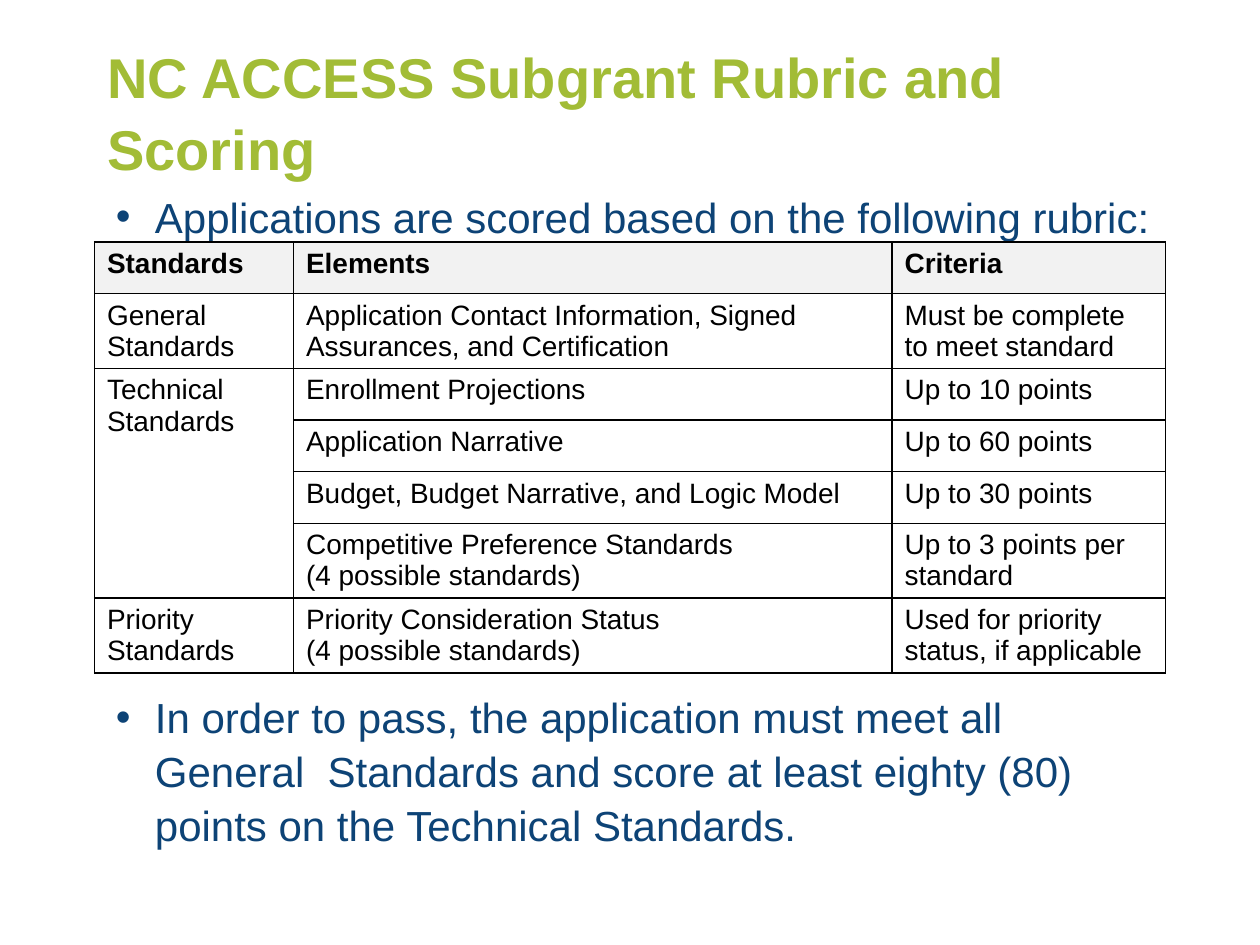
from lxml import etree
from pptx import Presentation
from pptx.dml.color import RGBColor
from pptx.enum.text import MSO_ANCHOR, MSO_AUTO_SIZE, PP_ALIGN
from pptx.oxml.ns import qn
from pptx.util import Inches, Pt

MIDDLE, TOP = MSO_ANCHOR.MIDDLE, MSO_ANCHOR.TOP
NO_FIT = MSO_AUTO_SIZE.NONE
LEFT = PP_ALIGN.LEFT

COLORS = {"title": "A2BC36", "body": "0D4376", "text": "000000",
          "header": "F2F2F2", "cell": "FFFFFF", "border": "000000"}
FONT = "Arial"

TITLE = "NC ACCESS Subgrant Rubric and Scoring"
BULLETS = [
    ("Applications are scored based on the following rubric:", 0),
    ("In order to pass, the application must meet all General  Standards "
     "and score at least eighty (80) points on the Technical Standards.", 255),
]
RUBRIC = [
    ("Standards", "Elements", "Criteria"),
    ("General Standards",
     "Application Contact Information, Signed Assurances, and Certification",
     "Must be complete to meet standard"),
    ("Technical Standards", "Enrollment Projections", "Up to 10 points"),
    (None, "Application Narrative", "Up to 60 points"),
    (None, "Budget, Budget Narrative, and Logic Model", "Up to 30 points"),
    (None, "Competitive Preference Standards\n(4 possible standards)",
     "Up to 3 points per standard"),
    ("Priority Standards",
     "Priority Consideration Status\n(4 possible standards)",
     "Used for priority status, if applicable"),
]
COLUMN_WIDTHS = [1.58, 4.75, 2.17]
ROW_HEIGHT = 0.41
TECHNICAL_ROWS = (2, 5)


def write(paragraph, text, size, color, bold=False, before=0, bullet=False,
          spacing=None):
    if bullet:
        props = paragraph._p.get_or_add_pPr()
        props.set("marL", str(Inches(0.38)))
        props.set("indent", str(Inches(-0.31)))
        etree.SubElement(props, qn("a:buFont")).set("typeface", FONT)
        etree.SubElement(props, qn("a:buChar")).set("char", "•")
    paragraph.alignment = LEFT
    paragraph.space_before = Pt(before)
    if spacing:
        paragraph.line_spacing = spacing
    run = paragraph.add_run()
    run.text = text
    run.font.name = FONT
    run.font.size = Pt(size)
    run.font.bold = bold
    run.font.color.rgb = RGBColor.from_string(COLORS[color])


def place(placeholder, left, top, width, height, anchor):
    placeholder.left, placeholder.top = Inches(left), Inches(top)
    placeholder.width, placeholder.height = Inches(width), Inches(height)
    frame = placeholder.text_frame
    frame.word_wrap = True
    frame.auto_size = NO_FIT
    frame.vertical_anchor = anchor
    return frame


def add_borders(cell):
    props = cell._tc.get_or_add_tcPr()
    for position, side in enumerate(("lnL", "lnR", "lnT", "lnB")):
        line = etree.Element(qn(f"a:{side}"), w=str(Pt(1)))
        fill = etree.SubElement(line, qn("a:solidFill"))
        etree.SubElement(fill, qn("a:srgbClr")).set("val", COLORS["border"])
        props.insert(position, line)


def add_rubric(slide):
    table = slide.shapes.add_table(
        len(RUBRIC), len(COLUMN_WIDTHS), Inches(0.75), Inches(1.92),
        Inches(sum(COLUMN_WIDTHS)), Inches(ROW_HEIGHT * len(RUBRIC))).table
    for column, width in zip(table.columns, COLUMN_WIDTHS):
        column.width = Inches(width)
    first, last = TECHNICAL_ROWS
    table.cell(first, 0).merge(table.cell(last, 0))
    for row, entries in enumerate(RUBRIC):
        table.rows[row].height = Inches(ROW_HEIGHT)
        for col, entry in enumerate(entries):
            cell = table.cell(row, col)
            cell.fill.solid()
            cell.fill.fore_color.rgb = RGBColor.from_string(
                COLORS["cell" if row else "header"])
            add_borders(cell)
            if entry is None:
                continue
            frame = cell.text_frame
            for index, line in enumerate(entry.split("\n")):
                paragraph = frame.add_paragraph() if index else frame.paragraphs[0]
                write(paragraph, line, 16, "text", bold=row == 0)


def main():
    deck = Presentation()
    deck.slide_width, deck.slide_height = Inches(10), Inches(7.5)
    slide = deck.slides.add_slide(deck.slide_layouts[1])
    heading = place(slide.shapes.title, 0.75, 0.33, 8.5, 1.08, MIDDLE)
    write(heading.paragraphs[0], TITLE, 32, "title", bold=True, spacing=1.07)
    body = place(slide.placeholders[1], 0.75, 1.44, 8.58, 5.25, TOP)
    for index, (text, before) in enumerate(BULLETS):
        paragraph = body.add_paragraph() if index else body.paragraphs[0]
        write(paragraph, text, 24, "body", before=before, bullet=True,
              spacing=1.07)
    add_rubric(slide)
    deck.save("out.pptx")


if __name__ == "__main__":
    main()
